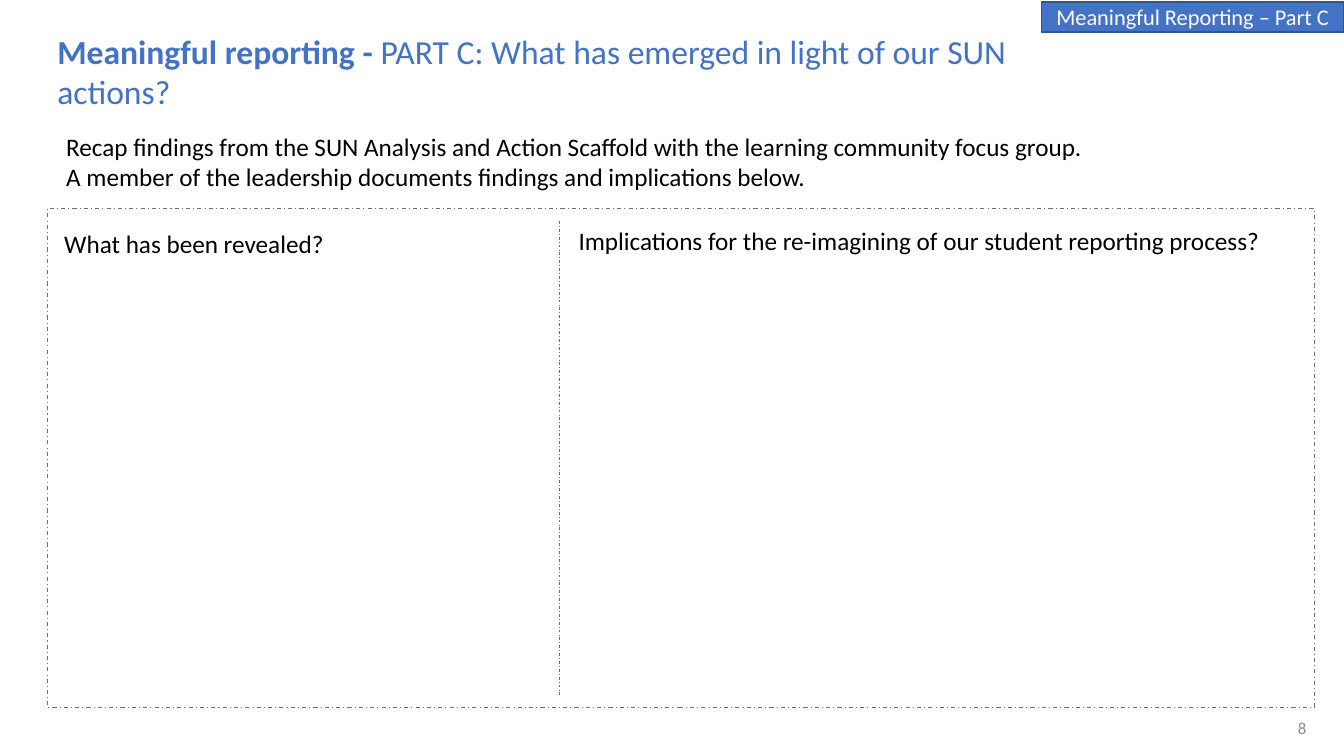
from lxml import etree
from pptx import Presentation
from pptx.dml.color import RGBColor
from pptx.enum.dml import MSO_LINE
from pptx.enum.shapes import MSO_CONNECTOR, MSO_SHAPE
from pptx.enum.text import MSO_ANCHOR, MSO_AUTO_SIZE, PP_ALIGN
from pptx.oxml.ns import qn
from pptx.util import Cm, Pt

LEFT, CENTER, RIGHT = PP_ALIGN.LEFT, PP_ALIGN.CENTER, PP_ALIGN.RIGHT
TOP, MIDDLE = MSO_ANCHOR.TOP, MSO_ANCHOR.MIDDLE
DASH_DOT = MSO_LINE.DASH_DOT

BLUE = RGBColor(0x44, 0x72, 0xC4)
DARK_BLUE = RGBColor(0x32, 0x54, 0x91)
GREY = RGBColor(0x76, 0x71, 0x71)
LIGHT_GREY = RGBColor(0x8C, 0x8C, 0x8C)
BLACK = RGBColor(0, 0, 0)
WHITE = RGBColor(0xFF, 0xFF, 0xFF)
FONT = "Calibri"

# Content
TITLE = [("Meaningful reporting - ", True),
         ("PART C: What has emerged in light of our SUN actions?", False)]
TAG = "Meaningful Reporting – Part C"
# Text boxes: lines, (left, top, width, height) in cm
TEXTS = [
    (["Recap findings from the SUN Analysis and Action Scaffold with the "
      "learning community focus group.",
      "A member of the leadership documents findings and implications below."],
     (1.42, 3.18, 28.98, 2.57)),
    (["Implications for the re-imagining of our student reporting process?"],
     (14.33, 5.56, 17.75, 1.02)),
    (["What has been revealed?"], (1.37, 5.64, 12.07, 1.02)),
]
PAGE_NUMBER = "8"

# Layout in cm
SLIDE_W, SLIDE_H = 33.87, 19.05
FRAME = (1.19, 5.26, 31.93, 12.57)
DIVIDER_X, DIVIDER_GAP = 14.1, 0.31
TAG_W, TAG_H = 7.62, 0.76


def cm(*lengths):
    return [Cm(v) for v in lengths]


def write(shape, lines, size, color, align=LEFT, anchor=TOP):
    tf = shape.text_frame
    tf.word_wrap = True
    tf.vertical_anchor = anchor
    tf.text = "\n".join(lines)
    for p in tf.paragraphs:
        p.alignment = align
        p.font.name, p.font.size = FONT, Pt(size)
        p.font.color.rgb = color


def outline(shape, color, width, dash=None):
    shape.line.color.rgb = color
    shape.line.width = Pt(width)
    if dash:
        shape.line.dash_style = dash


prs = Presentation()
prs.slide_width, prs.slide_height = cm(SLIDE_W, SLIDE_H)
s = prs.slides.add_slide(prs.slide_layouts[5])

# Title
title = s.shapes.title
title.left, title.top, title.width, title.height = cm(1.19, 0.64, 24.51, 3.68)
write(title, [""], 24, BLUE)
title.text_frame.auto_size = MSO_AUTO_SIZE.NONE
for text, bold in TITLE:
    r = title.text_frame.paragraphs[0].add_run()
    r.text, r.font.bold = text, bold

# Frame and column divider
frame = s.shapes.add_shape(MSO_SHAPE.RECTANGLE, *cm(*FRAME))
frame.shadow.inherit = False
frame.fill.background()
outline(frame, GREY, 0.75, DASH_DOT)

top, bottom = FRAME[1] + DIVIDER_GAP, FRAME[1] + FRAME[3] - DIVIDER_GAP
divider = s.shapes.add_connector(MSO_CONNECTOR.STRAIGHT,
                                 *cm(DIVIDER_X, top, DIVIDER_X, bottom))
outline(divider, GREY, 0.5, DASH_DOT)
etree.SubElement(divider._element.spPr, qn("a:effectLst"))

# Introduction and column headings
for lines, box in TEXTS:
    write(s.shapes.add_textbox(*cm(*box)), lines, 18, BLACK)

# Page number
number = s.shapes.add_textbox(*cm(25.55, 17.83, 7.62, 1.02))
write(number, [PAGE_NUMBER], 12, LIGHT_GREY, RIGHT, MIDDLE)

# Corner tag
tag = s.shapes.add_shape(MSO_SHAPE.RECTANGLE,
                         *cm(SLIDE_W - TAG_W, 0.05, TAG_W, TAG_H))
tag.shadow.inherit = False
tag.fill.solid()
tag.fill.fore_color.rgb = BLUE
outline(tag, DARK_BLUE, 1)
write(tag, [TAG], 16, WHITE, CENTER, MIDDLE)

prs.save("out.pptx")
